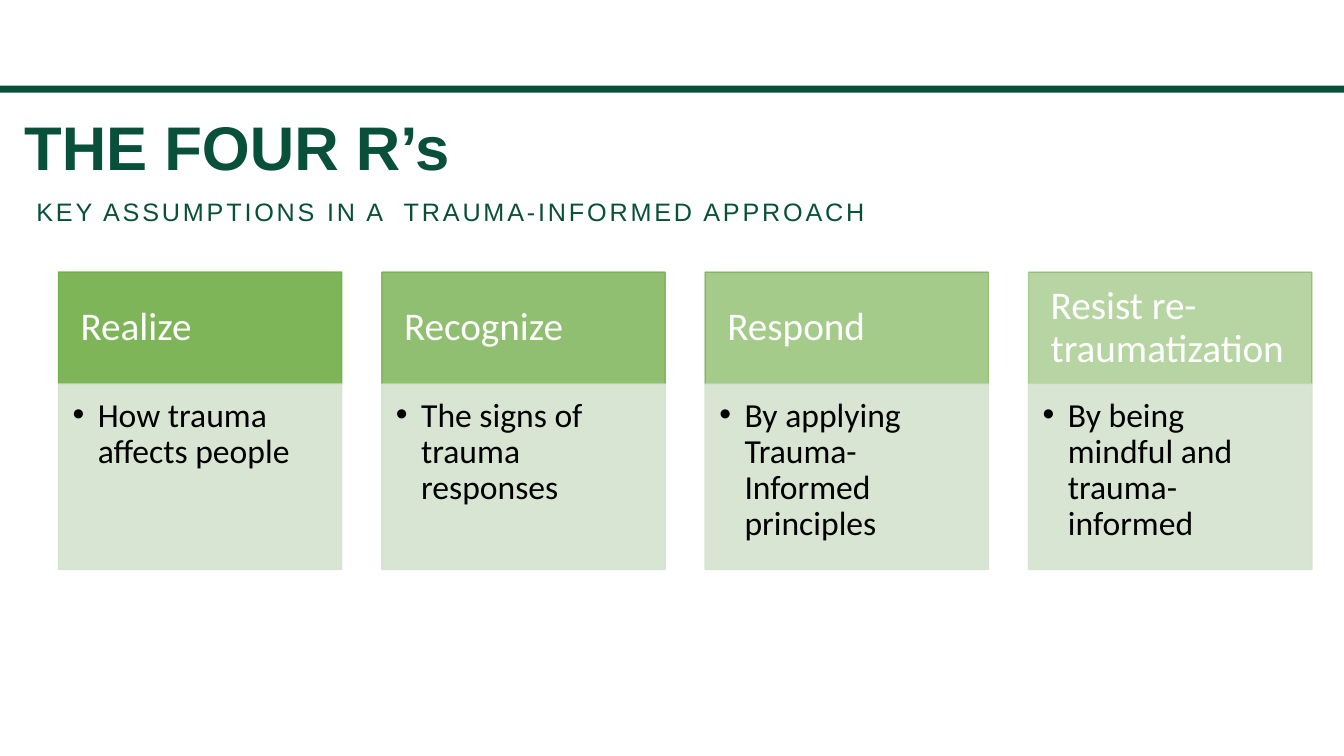
"""Build the slide on the four R's of a trauma-informed approach."""
from dataclasses import dataclass

from lxml.etree import SubElement as Sub
from pptx import Presentation
from pptx.dml.color import RGBColor
from pptx.enum.shapes import MSO_SHAPE as Shp
from pptx.enum.text import MSO_ANCHOR as Anc, PP_ALIGN as Align
from pptx.oxml.ns import qn
from pptx.shapes.autoshape import Shape
from pptx.slide import Slide
from pptx.text.text import Font
from pptx.util import Inches, Pt

PINE = RGBColor(0x09, 0x50, 0x3A)
GREEN = RGBColor(0x70, 0xAD, 0x47)
PALE = RGBColor(0xD5, 0xE3, 0xCF)
WHITE = RGBColor(0xFF, 0xFF, 0xFF)
BLACK = RGBColor(0x00, 0x00, 0x00)

LEFT, STEP, WIDTH = 0.58, 3.207, 2.81
HEAD_TOP, HEAD_H, BODY_H = 2.7, 1.11, 1.84


@dataclass(frozen=True)
class Box:
    left: float
    top: float
    width: float
    height: float


@dataclass(frozen=True)
class Look:
    size: int
    face: str
    color: RGBColor
    pads: tuple[float, float, float, float]
    anchor: Anc
    bold: bool = False


@dataclass(frozen=True)
class Card:
    head: str
    body: str
    alpha: int


PADS = (0.04, 0.02, 0.04, 0.02)
TITLE = Look(44, "Arial", PINE, PADS, Anc.TOP, True)
SUB = Look(18, "Arial", PINE, PADS, Anc.BOTTOM)
HEAD = Look(28, "Calibri", WHITE, (0.22, 0.12, 0.22, 0.12), Anc.MIDDLE)
BODY = Look(24, "Calibri", BLACK, (0.14, 0.14, 0.19, 0.21), Anc.TOP)

CARDS = (
    Card("Realize", "How trauma affects people", 90),
    Card("Recognize", "The signs of trauma responses", 77),
    Card("Respond", "By applying Trauma-Informed principles", 63),
    Card("Resist re-traumatization", "By being mindful and trauma-informed", 50),
)


def place(box: Box) -> tuple[Inches, Inches, Inches, Inches]:
    return (Inches(box.left), Inches(box.top),
            Inches(box.width), Inches(box.height))


def write(shape: Shape, text: str, look: Look, bullet: bool = False) -> Font:
    frame = shape.text_frame
    frame.text = text
    frame.word_wrap = True
    frame.vertical_anchor = look.anchor
    (frame.margin_left, frame.margin_top,
     frame.margin_right, frame.margin_bottom) = map(Inches, look.pads)
    para = frame.paragraphs[0]
    para.alignment = Align.LEFT
    para.line_spacing = 0.9
    if bullet:
        props = para._p.get_or_add_pPr()
        props.set("marL", str(Inches(0.25)))
        props.set("indent", str(Inches(-0.25)))
        Sub(props, qn("a:buFont"), typeface="Arial")
        Sub(props, qn("a:buChar"), char="•")
    font = para.runs[0].font
    font.size = Pt(look.size)
    font.name = look.face
    font.bold = look.bold
    font.color.rgb = look.color
    return font


def label(slide: Slide, box: Box, text: str, look: Look) -> Font:
    return write(slide.shapes.add_textbox(*place(box)), text, look)


def panel(slide: Slide, box: Box, color: RGBColor, alpha: int = 100) -> Shape:
    shape = slide.shapes.add_shape(Shp.RECTANGLE, *place(box))
    shape.shadow.inherit = False
    shape.fill.solid()
    shape.fill.fore_color.rgb = color
    shape.line.color.rgb = color
    shape.line.width = Pt(1)
    for tint in shape._element.spPr.iter(qn("a:srgbClr")):
        Sub(tint, qn("a:alpha"), val=str(alpha * 1000))
    return shape


def draw(slide: Slide, card: Card, left: float) -> None:
    top = Box(left, HEAD_TOP, WIDTH, HEAD_H)
    low = Box(left, HEAD_TOP + HEAD_H, WIDTH, BODY_H)
    write(panel(slide, top, GREEN, card.alpha), card.head, HEAD)
    write(panel(slide, low, PALE, 90), card.body, BODY, bullet=True)


def main() -> None:
    deck = Presentation()
    deck.slide_width, deck.slide_height = Inches(13.33), Inches(7.5)
    slide = deck.slides.add_slide(deck.slide_layouts[6])
    rule = panel(slide, Box(-0.03, 0.85, 13.36, 0.07), PINE)
    rule.line.fill.background()
    label(slide, Box(0.2, 1.14, 12, 1.13), "THE FOUR R’s", TITLE)
    font = label(slide, Box(0.32, 1.92, 12, 0.35),
                 "KEY ASSUMPTIONS IN A  TRAUMA-INFORMED APPROACH", SUB)
    font._element.set("spc", "200")
    for i, card in enumerate(CARDS):
        draw(slide, card, LEFT + i * STEP)
    deck.save("out.pptx")


if __name__ == "__main__":
    main()
